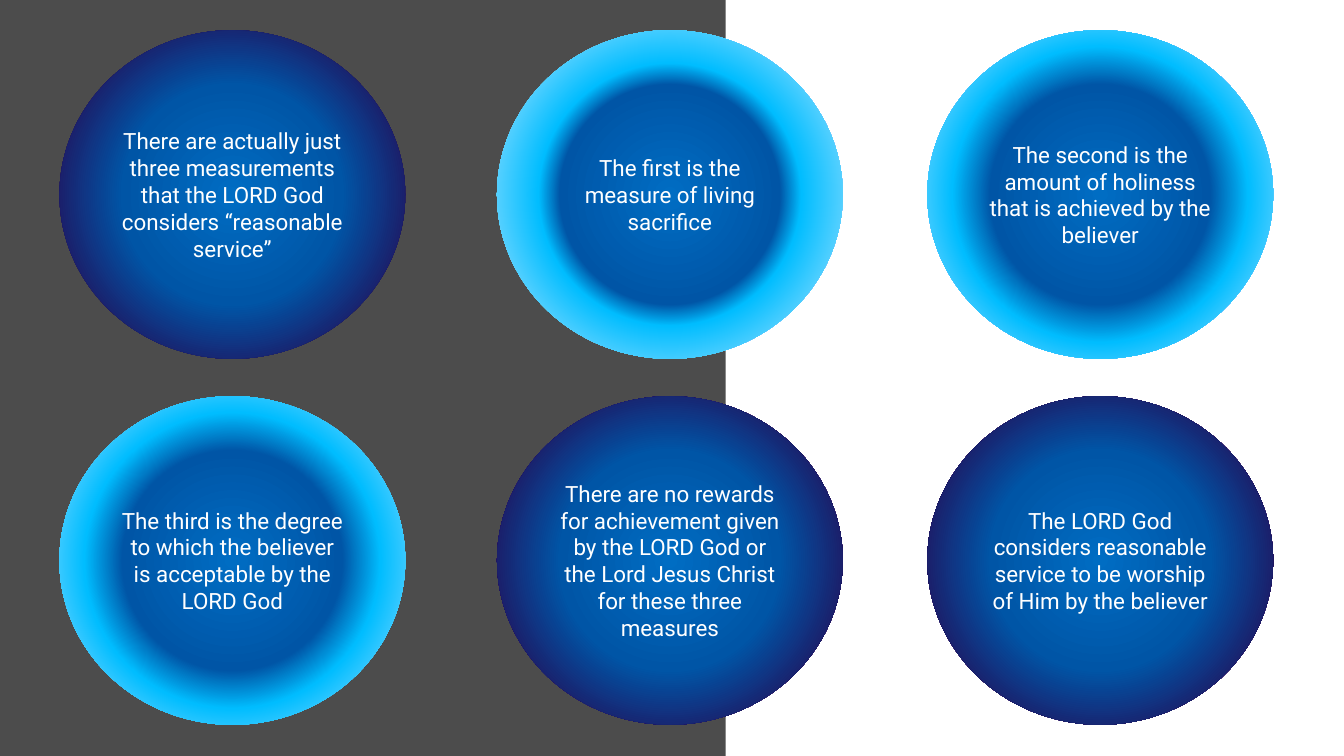
import pptx
import pptx.dml.color
import pptx.enum.shapes
import pptx.enum.text
import pptx.oxml
import pptx.oxml.ns
import pptx.util

COLUMN_LEFTS = (42.5, 355, 662.4)
ROW_TOPS = (21.6, 283)
CIRCLE_WIDTH, CIRCLE_HEIGHT = 247, 234.7

CORE = ((0, "006DC3"), (46, "0055A6"))
NAVY = CORE + ((83, "250B55"),)
NAVY_PALE_EDGE = NAVY + ((100, "D5EFFE"),)
NARROW_GLOW = CORE + ((55, "00BDFF"), (94, "BDE7FF"))
WIDE_GLOW = CORE + ((62, "00BDFF"), (96, "BDE5FF"))
SOFT_GLOW = CORE + ((62, "00BDFF"), (97, "B9E4FF"))

MEASURES = (
    ("There are actually just three measurements that the LORD God "
     "considers “reasonable service”", NAVY),
    ("The first is the measure of living sacrifice", NARROW_GLOW),
    ("The second is the amount of holiness that is achieved by the believer",
     WIDE_GLOW),
    ("The third is the degree to which the believer is acceptable by the "
     "LORD God", SOFT_GLOW),
    ("There are no rewards for achievement given by the LORD God or the "
     "Lord Jesus Christ for these three measures", NAVY_PALE_EDGE),
    ("The LORD God considers reasonable service to be worship of Him by the "
     "believer", NAVY_PALE_EDGE),
)


def color(hex_string):
    """Turn a hex string into a colour."""
    return pptx.dml.color.RGBColor.from_string(hex_string)


def add_plain_shape(slide, kind, left, top, width, height):
    """Add a preset shape without shadow or outline."""
    points = [pptx.util.Pt(value) for value in (left, top, width, height)]
    shape = slide.shapes.add_shape(kind, *points)
    shape.shadow.inherit = False
    shape.line.fill.background()
    return shape


def add_panel(slide, width, height, fill, opacity):
    """Add a translucent panel along the left edge of the slide."""
    kind = pptx.enum.shapes.MSO_SHAPE.RECTANGLE
    panel = add_plain_shape(slide, kind, 0, 0, width, height)
    panel.fill.solid()
    panel.fill.fore_color.rgb = color(fill)
    fill_color = panel._element.spPr.find(".//" + pptx.oxml.ns.qn("a:srgbClr"))
    alpha = pptx.oxml.parse_xml(
        f'<a:alpha {pptx.oxml.ns.nsdecls("a")} val="{opacity * 1000}"/>')
    fill_color.append(alpha)


def fill_radially(shape, stops):
    """Fill a shape with a gradient that runs outward from its centre."""
    stop_xml = "".join(
        f'<a:gs pos="{position * 1000}"><a:srgbClr val="{shade}"/></a:gs>'
        for position, shade in stops)
    gradient = pptx.oxml.parse_xml(
        f'<a:gradFill {pptx.oxml.ns.nsdecls("a")} rotWithShape="1">'
        f'<a:gsLst>{stop_xml}</a:gsLst><a:path path="circle">'
        '<a:fillToRect l="50000" t="50000" r="50000" b="50000"/>'
        '</a:path></a:gradFill>')
    shape.fill.gradient()
    properties = shape._element.spPr
    properties.replace(
        properties.find(pptx.oxml.ns.qn("a:gradFill")), gradient)


def write_text(shape, text, *, size=16, font="Roboto", fill="FFFFFF"):
    """Write centred text in a shape."""
    frame = shape.text_frame
    frame.word_wrap = True
    frame.vertical_anchor = pptx.enum.text.MSO_ANCHOR.MIDDLE
    para = frame.paragraphs[0]
    para.alignment = pptx.enum.text.PP_ALIGN.CENTER
    span = para.add_run()
    span.text = text
    span.font.size = pptx.util.Pt(size)
    span.font.name = font
    span.font.color.rgb = color(fill)


def add_circle(slide, left, top, text, stops):
    """Add one gradient circle with its statement."""
    kind = pptx.enum.shapes.MSO_SHAPE.OVAL
    circle = add_plain_shape(
        slide, kind, left, top, CIRCLE_WIDTH, CIRCLE_HEIGHT)
    fill_radially(circle, stops)
    write_text(circle, text)


def main():
    """Build the slide and save the deck."""
    deck = pptx.Presentation()
    deck.slide_width = pptx.util.Pt(960)
    deck.slide_height = pptx.util.Pt(540)
    page = deck.slides.add_slide(deck.slide_layouts.get_by_name("Blank"))
    add_panel(page, 518.4, 540, "000000", 70)
    for index, (text, stops) in enumerate(MEASURES):
        row, column = divmod(index, len(COLUMN_LEFTS))
        add_circle(page, COLUMN_LEFTS[column], ROW_TOPS[row], text, stops)
    deck.save("out.pptx")


if __name__ == "__main__":
    main()
